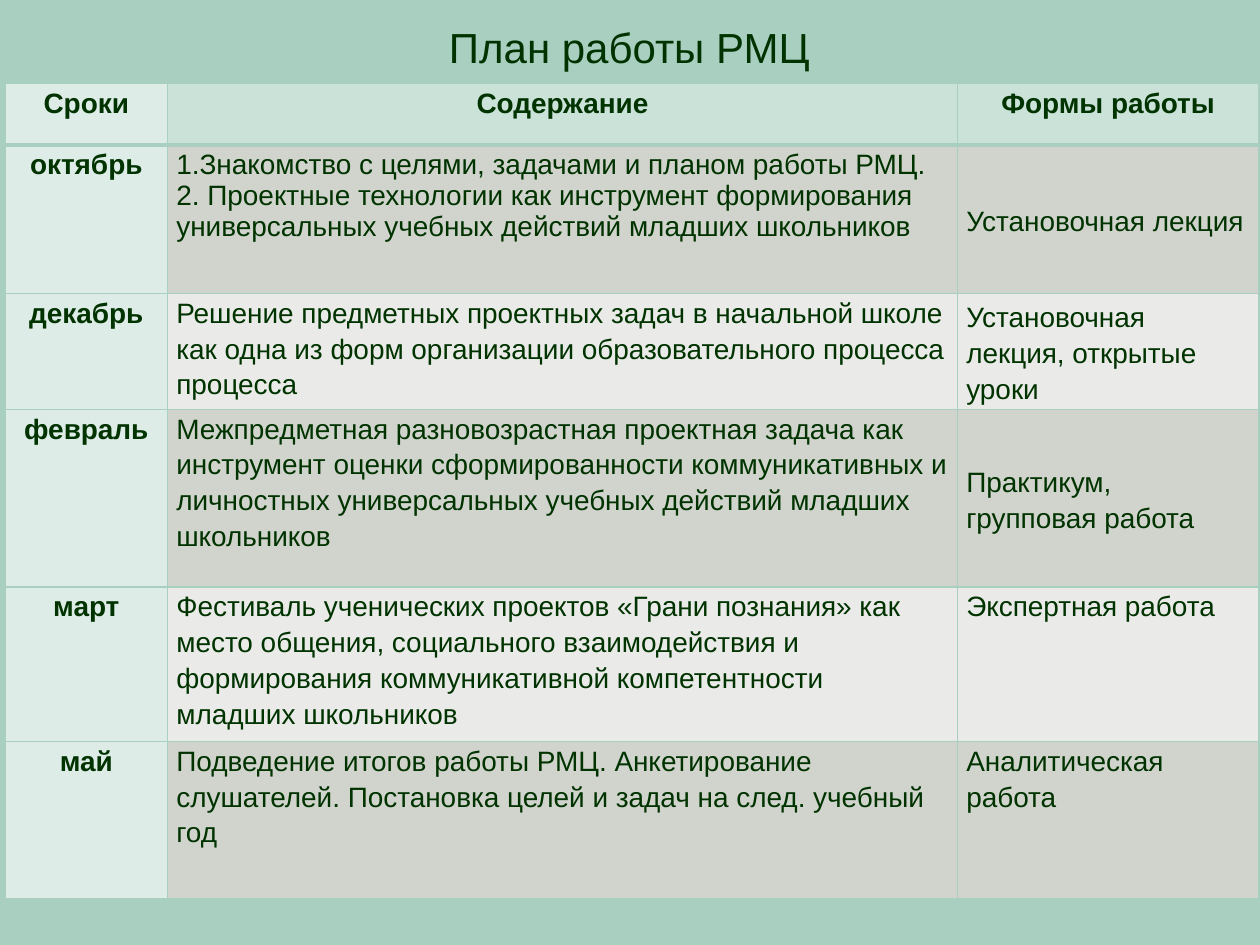
from dataclasses import dataclass

from lxml import etree
from pptx import Presentation
from pptx import util as u
from pptx.dml.color import RGBColor
from pptx.enum import text
from pptx.oxml import ns


@dataclass(frozen=True)
class Theme:
    font: str = "Arial"
    ink: str = "003300"
    page: str = "A9CFC0"
    header: str = "CBE2D9"
    months: str = "DDECE6"
    bands: tuple = ("D1D4CD", "EAEBE8")
    title_size: int = 24
    table_size: int = 16
    line_spacing: float = 1.15
    border: int = 1
    header_border: int = 3


class PlanSlide:
    def __init__(self, deck, theme):
        self.theme = theme
        self.page = deck.slides.add_slide(deck.slide_layouts[6])
        fill = self.page.background.fill
        fill.solid()
        fill.fore_color.rgb = RGBColor.from_string(theme.page)

    def style(self, para, size, bold=False, centred=False):
        para.alignment = text.PP_ALIGN.CENTER if centred else text.PP_ALIGN.LEFT
        for span in para.runs:
            span.font.name = self.theme.font
            span.font.size = u.Pt(size)
            span.font.bold = bold
            span.font.color.rgb = RGBColor.from_string(self.theme.ink)

    def title(self, words, left, top, width, height, bottom_inset):
        box = self.page.shapes.add_textbox(
            u.Inches(left), u.Inches(top), u.Inches(width), u.Inches(height))
        frame = box.text_frame
        frame.word_wrap = True
        frame.vertical_anchor = text.MSO_ANCHOR.BOTTOM
        frame.margin_bottom = u.Inches(bottom_inset)
        frame.text = words
        self.style(frame.paragraphs[0], self.theme.title_size, centred=True)

    def borders(self, cell, widths):
        properties = cell._tc.get_or_add_tcPr()
        for position, (side, width) in enumerate(widths.items()):
            line = etree.Element(ns.qn(f"a:ln{side}"), w=str(u.Pt(width)))
            fill = etree.SubElement(line, ns.qn("a:solidFill"))
            etree.SubElement(fill, ns.qn("a:srgbClr"), val=self.theme.page)
            properties.insert(position, line)

    def cell(self, cell, words, row, column):
        theme = self.theme
        is_header, is_month = row == 0, column == 0

        # Fill and borders
        if is_month:
            colour = theme.months
        elif is_header:
            colour = theme.header
        else:
            colour = theme.bands[(row - 1) % 2]
        cell.fill.solid()
        cell.fill.fore_color.rgb = RGBColor.from_string(colour)
        widths = dict.fromkeys("LRTB", theme.border)
        if is_header:
            widths["B"] = theme.header_border
        elif row == 1:
            widths["T"] = theme.header_border
        self.borders(cell, widths)

        # Text
        cell.margin_left = cell.margin_right = u.Inches(0.06 if is_header else 0.07)
        cell.margin_top = cell.margin_bottom = 0
        cell.text_frame.text = words
        for para in cell.text_frame.paragraphs:
            para.line_spacing = theme.line_spacing
            emphasis = is_header or is_month
            self.style(para, theme.table_size, bold=emphasis, centred=emphasis)

    def table(self, rows, left, top, widths, heights):
        table = self.page.shapes.add_table(
            len(rows), len(widths), u.Inches(left), u.Inches(top),
            u.Inches(sum(widths)), u.Inches(sum(heights))).table
        table.horz_banding = False
        for column, width in zip(table.columns, widths):
            column.width = u.Inches(width)
        for line, height in zip(table.rows, heights):
            line.height = u.Inches(height)
        for r, row in enumerate(rows):
            for c, words in enumerate(row):
                self.cell(table.cell(r, c), words, r, c)
        return table


PLAN = [
    ("Сроки", "Содержание", "Формы работы"),
    ("октябрь",
     "1.Знакомство с целями, задачами и планом работы РМЦ.\n"
     "2. Проектные технологии как инструмент формирования\n"
     "универсальных учебных действий младших школьников",
     "Установочная лекция"),
    ("декабрь",
     "Решение предметных проектных задач в начальной школе как одна из форм "
     "организации образовательного процесса процесса",
     "Установочная лекция, открытые уроки"),
    ("февраль",
     "Межпредметная разновозрастная проектная задача как инструмент оценки "
     "сформированности коммуникативных и личностных универсальных учебных "
     "действий младших школьников",
     "Практикум,\nгрупповая работа"),
    ("март",
     "Фестиваль ученических проектов «Грани познания» как место общения, "
     "социального взаимодействия и формирования коммуникативной "
     "компетентности младших школьников",
     "Экспертная работа"),
    ("май",
     "Подведение итогов работы РМЦ. Анкетирование слушателей. Постановка "
     "целей и задач на след. учебный год",
     "Аналитическая работа"),
]


def main():
    deck = Presentation()
    deck.slide_width, deck.slide_height = u.Inches(10), u.Inches(7.5)
    slide = PlanSlide(deck, Theme())

    # Heading
    slide.title("План работы РМЦ", 0.12, -0.11, 9.75, 1.1, bottom_inset=0.42)

    # Work plan
    table = slide.table(PLAN, 0.04, 0.66, widths=(1.29, 6.27, 2.39),
                        heights=(0.49, 1.18, 0.71, 1.41, 0.71, 1.25))

    # The first three work forms sit mid-cell
    for row in (1, 2, 3):
        table.cell(row, 2).vertical_anchor = text.MSO_ANCHOR.MIDDLE

    # The numbered list closes up after its first line
    for para in table.cell(1, 1).text_frame.paragraphs[1:]:
        para.line_spacing = 1.0

    deck.save("out.pptx")


if __name__ == "__main__":
    main()
